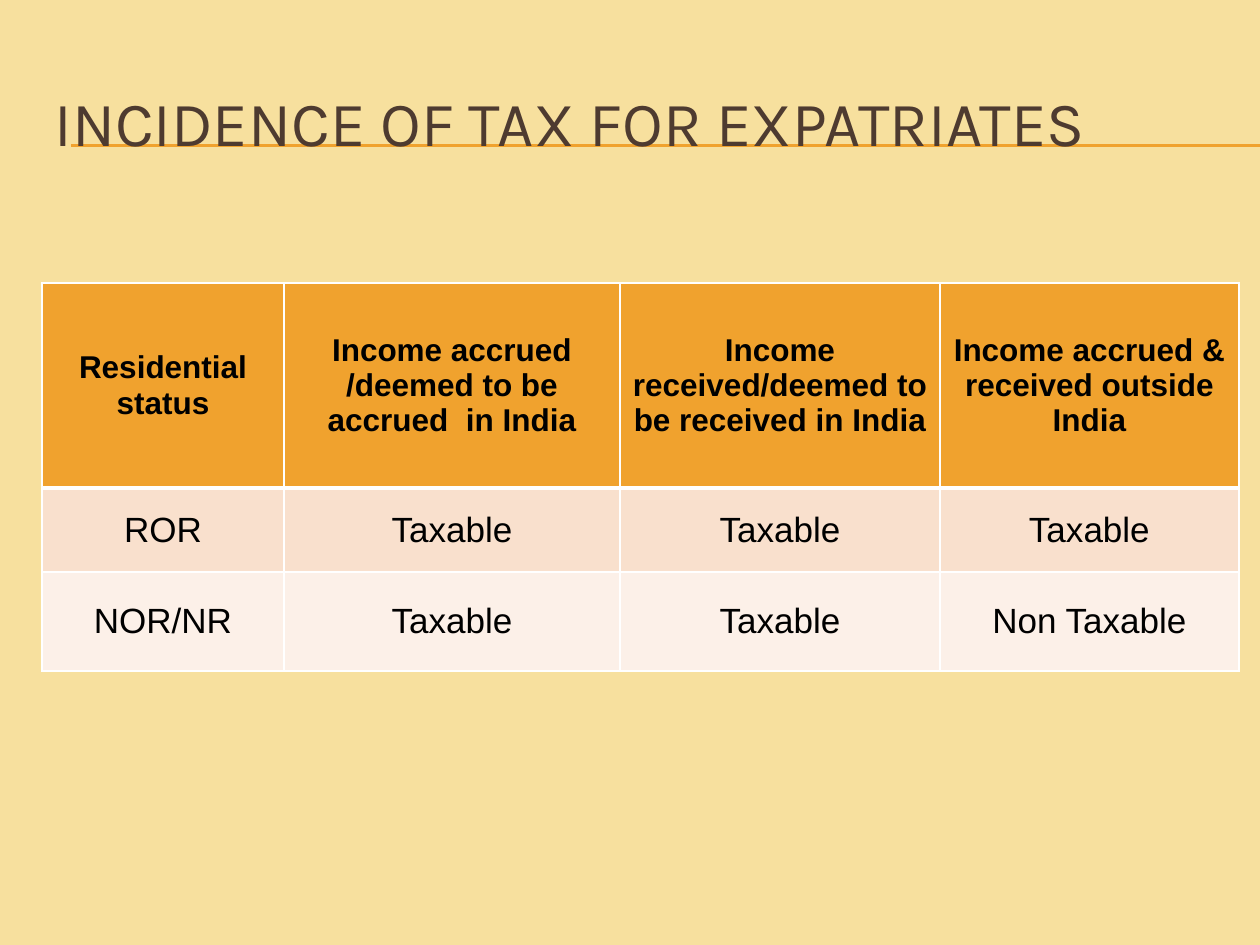
"""Build a slide with a table on the incidence of tax for expatriates."""
from dataclasses import dataclass

from lxml.etree import SubElement
from pptx import Presentation
from pptx.dml.color import RGBColor
from pptx.enum.shapes import MSO_CONNECTOR
from pptx.enum.text import MSO_ANCHOR, PP_ALIGN
from pptx.oxml.ns import qn
from pptx.util import Pt


@dataclass(frozen=True)
class Theme:
    background: str = "F7E09E"
    accent: str = "F0A22E"
    title: str = "4E3B30"
    text: str = "000000"
    border: str = "FFFFFF"
    bands: tuple = ("F0A22E", "F9E0CD", "FCF0E8")
    title_font: str = "Karla"
    table_font: str = "Arial"
    title_size: int = 36
    header_size: int = 18
    body_size: int = 20


def px(length):
    return length * 914400 // 126


def write(frame, text, *, font, size, color, bold=False, align=PP_ALIGN.LEFT):
    frame.word_wrap = True
    para = frame.paragraphs[0]
    para.alignment = align
    span = para.add_run()
    span.text = text
    span.font.name = font
    span.font.size = Pt(size)
    span.font.bold = bold
    span.font.color.rgb = RGBColor.from_string(color)


theme = Theme()
deck = Presentation()
deck.slide_width, deck.slide_height = px(1260), px(945)
page = deck.slides.add_slide(deck.slide_layouts[6])
page.background.fill.solid()
page.background.fill.fore_color.rgb = RGBColor.from_string(theme.background)

for top in (145, 146):
    rule = page.shapes.add_connector(
        MSO_CONNECTOR.STRAIGHT, px(71), px(top), px(1260), px(top))
    rule.line.color.rgb = RGBColor.from_string(theme.accent)
    rule.line.width = Pt(0.75)
    SubElement(rule.element.spPr, qn("a:effectLst"))

title = page.shapes.add_textbox(px(42), px(63), px(1197), px(116))
title.text_frame.vertical_anchor = MSO_ANCHOR.MIDDLE
write(title.text_frame, "INCIDENCE OF TAX FOR EXPATRIATES",
      font=theme.title_font, size=theme.title_size, color=theme.title)

rows = [
    ["Residential status", "Income accrued /deemed to be accrued  in India",
     "Income received/deemed to be received in India",
     "Income accrued & received outside India"],
    ["ROR", "Taxable", "Taxable", "Taxable"],
    ["NOR/NR", "Taxable", "Taxable", "Non Taxable"],
]
column_widths = (242, 336, 320, 299)
row_heights = (205, 84, 99)

table = page.shapes.add_table(
    len(rows), len(column_widths), px(42), px(283),
    px(sum(column_widths)), px(sum(row_heights))).table
for column, width in zip(table.columns, column_widths):
    column.width = px(width)

for index, (texts, height, band) in enumerate(zip(rows, row_heights, theme.bands)):
    header = index == 0
    table.rows[index].height = px(height)
    border_widths = {"lnL": 1, "lnR": 1, "lnT": 3 if index == 1 else 1,
                     "lnB": 3 if header else 1}
    for cell, text in zip(table.rows[index].cells, texts):
        cell.vertical_anchor = MSO_ANCHOR.MIDDLE
        write(cell.text_frame, text, font=theme.table_font,
              size=theme.header_size if header else theme.body_size,
              color=theme.text, bold=header, align=PP_ALIGN.CENTER)
        properties = cell._tc.get_or_add_tcPr()
        for side, points in border_widths.items():
            border = SubElement(properties, qn(f"a:{side}"), w=str(Pt(points)))
            paint = SubElement(border, qn("a:solidFill"))
            SubElement(paint, qn("a:srgbClr"), val=theme.border)
        cell.fill.solid()
        cell.fill.fore_color.rgb = RGBColor.from_string(band)

deck.save("out.pptx")
